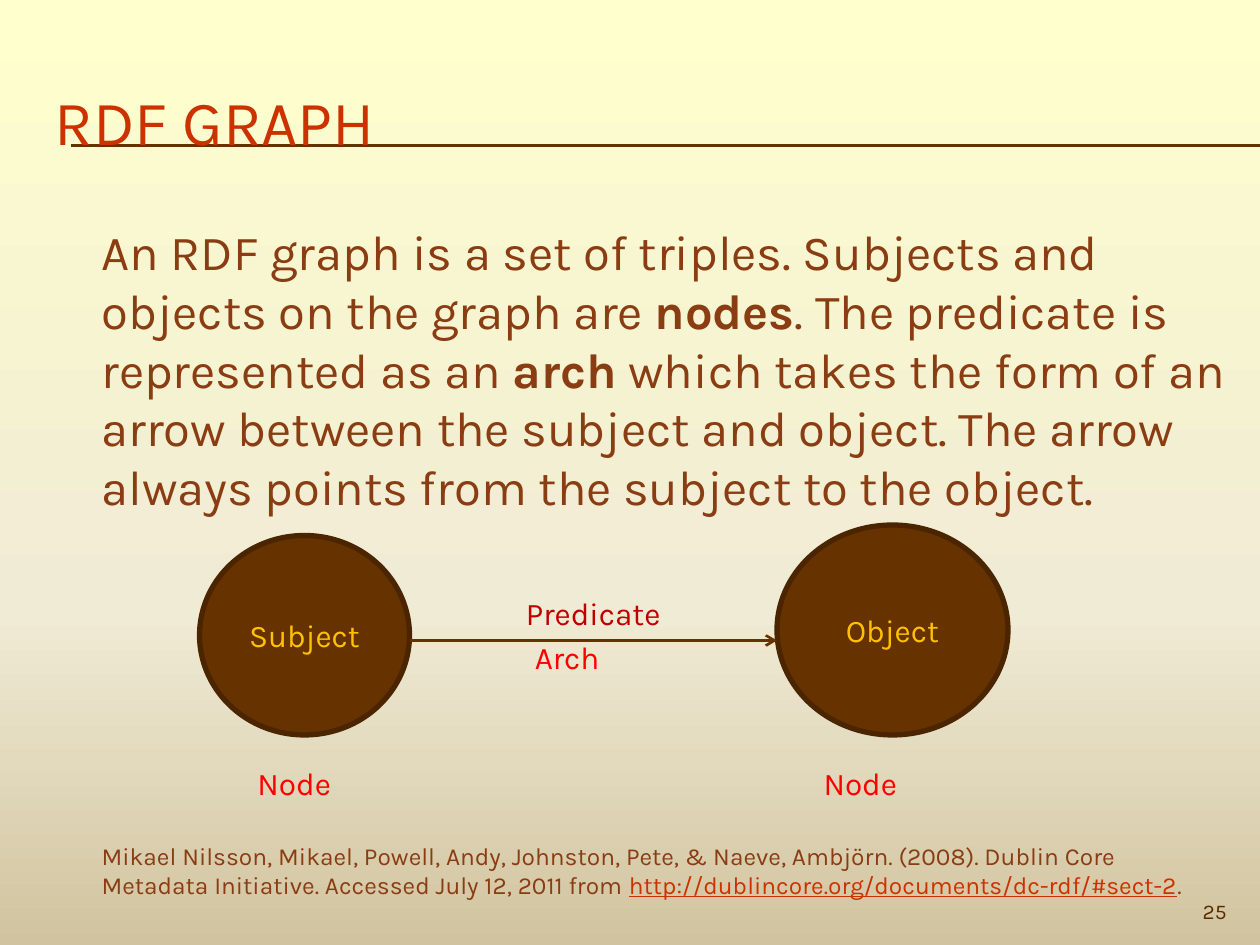
import copy
import dataclasses

import lxml.etree
import pptx
import pptx.dml.color
import pptx.enum.shapes
import pptx.enum.text
import pptx.oxml.ns
import pptx.util

Pt = pptx.util.Pt
Align = pptx.enum.text.PP_ALIGN
Anchor = pptx.enum.text.MSO_ANCHOR
qn = pptx.oxml.ns.qn


@dataclasses.dataclass(frozen=True)
class Theme:
    """Colours, font and type sizes of the slide."""
    font: str = "Karla"
    top: str = "FFFFCD"
    mid: str = "F0EBD5"
    low: str = "D1C39F"
    head: str = "CC3200"
    text: str = "8A3C12"
    node: str = "663200"
    edge: str = "4B2500"
    gold: str = "FFC000"
    verb: str = "C00000"
    note: str = "FF0000"
    page: str = "5A2C00"
    title: int = 36
    body: int = 28
    label: int = 18
    cite: int = 14
    small: int = 12


THEME = Theme()


def rgb(code):
    """Turn a hex code into a colour."""
    return pptx.dml.color.RGBColor.from_string(code)


def write(frame, text, size=THEME.label, color=THEME.text, bold=False,
          under=False, align=Align.LEFT, anchor=Anchor.TOP):
    """Add a formatted run to the first paragraph of a frame."""
    frame.word_wrap = True
    frame.vertical_anchor = anchor
    para = frame.paragraphs[0]
    para.alignment = align
    run = para.add_run()
    run.text = text
    font = run.font
    font.name, font.size = THEME.font, Pt(size)
    font.bold, font.underline = bold, under
    font.color.rgb = rgb(color)


def frame_at(slide, box):
    """Add a text box and return its frame."""
    return slide.shapes.add_textbox(*map(Pt, box)).text_frame


def draw_line(slide, start, end, width, arrow=False):
    """Draw a straight line, with an arrowhead at its end if asked."""
    line = slide.shapes.add_connector(
        pptx.enum.shapes.MSO_CONNECTOR.STRAIGHT, *map(Pt, start + end))
    line.line.color.rgb = rgb(THEME.node)
    line.line.width = Pt(width)
    if arrow:
        lxml.etree.SubElement(line.line._get_or_add_ln(), qn("a:tailEnd"),
                              type="arrow")
    lxml.etree.SubElement(line._element.spPr, qn("a:effectLst"))


def draw_node(slide, text, box):
    """Draw an ellipse with a centred name."""
    node = slide.shapes.add_shape(
        pptx.enum.shapes.MSO_SHAPE.OVAL, *map(Pt, box))
    node.shadow.inherit = False
    node.fill.solid()
    node.fill.fore_color.rgb = rgb(THEME.node)
    node.line.color.rgb = rgb(THEME.edge)
    node.line.width = Pt(3)
    write(node.text_frame, text, color=THEME.gold, align=Align.CENTER,
          anchor=Anchor.MIDDLE)


def paint(slide):
    """Fill the background with a three-stop gradient."""
    fill = slide.background.fill
    fill.gradient()
    fill.gradient_angle = 270
    last = fill._fill._gradFill.gsLst[-1]
    last.addprevious(copy.deepcopy(last))
    stops = ((0, THEME.top), (0.65, THEME.mid), (1, THEME.low))
    for stop, (place, code) in zip(fill.gradient_stops, stops):
        stop.position = place
        stop.color.rgb = rgb(code)


def add_head(slide, box):
    """Place the title over a double rule."""
    left, top, width, height = box
    for drop in (46.8, 47.5):
        draw_line(slide, (left + 16.5, top + drop), (720, top + drop), 0.75)
    title = slide.shapes.title
    title.left, title.top, title.width, title.height = map(Pt, box)
    write(title.text_frame, "RDF GRAPH", size=THEME.title, color=THEME.head,
          anchor=Anchor.MIDDLE)
    title.element.getparent().append(title.element)


def add_body(slide, box):
    """Place the definition, with its key terms in bold."""
    frame = frame_at(slide, box)
    parts = (
        "An RDF graph is a set of triples. Subjects and objects on the "
        "graph are ", "nodes", ". The predicate is represented as an ",
        "arch", " which takes the form of an arrow between the subject and "
        "object. The arrow always points from the subject to the object.")
    for spot, part in enumerate(parts):
        write(frame, part, size=THEME.body, bold=spot % 2 == 1)


def add_graph(slide, box):
    """Draw the two nodes, the arrow and their labels."""
    left, top, width, height = box
    base = top + height
    draw_node(slide, "Object", (left + width - 132, top, 132, 120))
    draw_node(slide, "Subject", (left, top + 6, 120, 114))
    draw_line(slide, (left + 120, top + 66), (left + width - 132, top + 66),
              1.5, arrow=True)
    write(frame_at(slide, (left + 174, top + 36, 102, 29)), "Predicate",
          color=THEME.verb, align=Align.CENTER)
    labels = (("Arch", 184.5, top + 61), ("Node", 26, base - 29),
              ("Node", 349.5, base - 29))
    for text, shift, high in labels:
        write(frame_at(slide, (left + shift, high, 70, 29)), text,
              color=THEME.note)


def add_source(slide, box):
    """Place the citation with its underlined address."""
    frame = frame_at(slide, box)
    write(frame, "Mikael Nilsson, Mikael, Powell, Andy, Johnston, Pete, & "
          "Naeve, Ambjörn. (2008). Dublin Core Metadata Initiative. "
          "Accessed July 12, 2011 from ", size=THEME.cite)
    write(frame, "http://dublincore.org/documents/dc-rdf/#sect-2",
          size=THEME.cite, color=THEME.head, under=True)
    write(frame, ".", size=THEME.cite)


def add_page(slide, box):
    """Place the page number."""
    write(frame_at(slide, box), "25", size=THEME.small, color=THEME.page,
          align=Align.RIGHT)


def main():
    """Build and save the slide."""
    deck = pptx.Presentation()
    deck.slide_width, deck.slide_height = Pt(720), Pt(540)
    slide = deck.slides.add_slide(deck.slide_layouts[5])
    paint(slide)
    add_head(slide, (24, 36, 684, 66))
    add_body(slide, (51, 123, 657, 176))
    add_graph(slide, (114, 300, 462, 162))
    add_source(slide, (51, 477, 657, 42))
    add_page(slide, (648, 510, 60, 19.5))
    deck.save("out.pptx")


if __name__ == "__main__":
    main()
